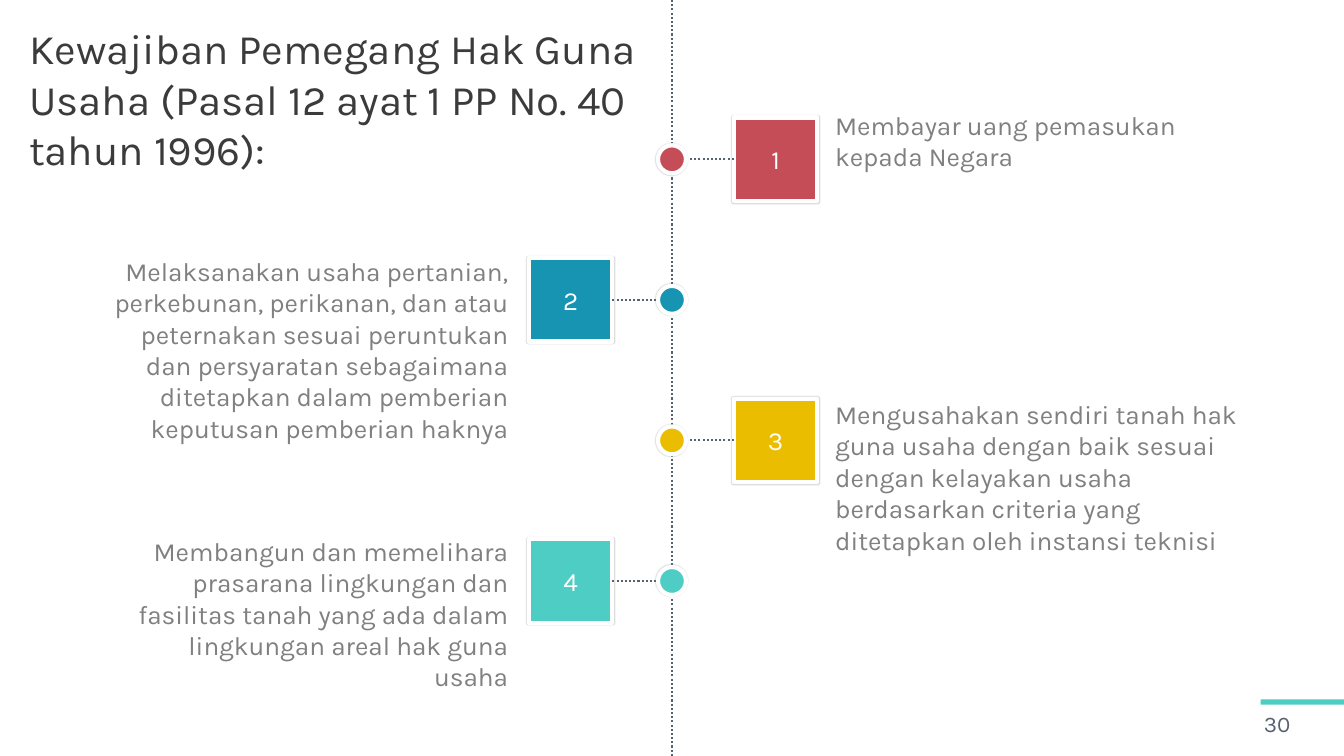
from dataclasses import dataclass
from itertools import chain
from typing import NamedTuple

from lxml.etree import SubElement
from pptx import Presentation
from pptx.dml.color import RGBColor
from pptx.enum.dml import MSO_LINE
from pptx.enum.shapes import MSO_CONNECTOR, MSO_SHAPE
from pptx.enum.text import MSO_ANCHOR, MSO_AUTO_SIZE, PP_ALIGN
from pptx.oxml.ns import qn
from pptx.util import Inches, Pt

# The slide is a grid of 48 columns by 27 rows of square cells.
COLS, ROWS = 48, 27
CELL = 20 / COLS
AXIS = COLS / 2
FIRST, STEP = 5.69, 5.02
SIDE, DOT = 2.98, 1


@dataclass(frozen=True)
class Theme:
    font: str = "Karla"
    ink: str = "3B3B3B"
    body: str = "808080"
    slate: str = "556272"
    white: str = "FFFFFF"
    red: str = "C54D57"
    blue: str = "1694B2"
    gold: str = "EABD00"
    mint: str = "4ECDC4"
    title_size: int = 45
    text_size: int = 28
    page_size: int = 24
    dots: float = 2.25
    rim: float = 4.5


class Box(NamedTuple):
    x: float
    y: float
    w: float
    h: float


class Side(NamedTuple):
    square: float
    text: float
    width: float
    align: PP_ALIGN
    site: int
    dot: float


class Duty(NamedTuple):
    side: Side
    color: str
    top: float
    height: float
    text: str


T = Theme()
LEFT = Side(18.89, 3.79, 14.59, PP_ALIGN.RIGHT, 3, AXIS - DOT / 2)
RIGHT = Side(26.21, 29.59, 15.5, PP_ALIGN.LEFT, 1, AXIS + DOT / 2)
DUTIES = (
    Duty(RIGHT, T.red, 3.79, 5.5, "Membayar uang pemasukan kepada Negara"),
    Duty(LEFT, T.blue, 9, 6.7,
         "Melaksanakan usaha pertanian, perkebunan, perikanan, dan atau "
         "peternakan sesuai peruntukan dan persyaratan sebagaimana "
         "ditetapkan dalam pemberian keputusan pemberian haknya"),
    Duty(RIGHT, T.gold, 14.11, 6.31,
         "Mengusahakan sendiri tanah hak guna usaha dengan baik sesuai "
         "dengan kelayakan usaha berdasarkan criteria yang ditetapkan "
         "oleh instansi teknisi"),
    Duty(LEFT, T.mint, 19, 6.74,
         "Membangun dan memelihara prasarana lingkungan dan fasilitas "
         "tanah yang ada dalam lingkungan areal hak guna usaha"),
)


def cells(n: float) -> int:
    return Inches(n * CELL)


def rgb(color: str) -> RGBColor:
    return RGBColor.from_string(color)


def write(shape, text: str, size: int, color: str, align=PP_ALIGN.LEFT,
          anchor=MSO_ANCHOR.TOP) -> None:
    frame = shape.text_frame
    frame.word_wrap = True
    frame.auto_size = MSO_AUTO_SIZE.NONE
    frame.vertical_anchor = anchor
    para = frame.paragraphs[0]
    para.alignment = align
    run = para.add_run()
    run.text = text
    run.font.name = T.font
    run.font.size = Pt(size)
    run.font.color.rgb = rgb(color)


def add_text(slide, box: Box, *args, **kw) -> None:
    write(slide.shapes.add_textbox(*map(cells, box)), *args, **kw)


def add_block(slide, kind, box: Box, color: str):
    shape = slide.shapes.add_shape(kind, *map(cells, box))
    shape.shadow.inherit = False
    shape.fill.solid()
    shape.fill.fore_color.rgb = rgb(color)
    shape.line.fill.background()
    return shape


def add_rim(shape) -> None:
    """Give the shape a white border with a faint shadow around it."""
    shape.line.color.rgb = rgb(T.white)
    shape.line.width = Pt(T.rim)
    effects = shape._element.spPr.find(qn("a:effectLst"))
    shade = SubElement(effects, qn("a:outerShdw"), blurRad=str(Pt(1)),
                       dist="0", dir="0", algn="ctr", rotWithShape="0")
    color = SubElement(shade, qn("a:srgbClr"), val="000000")
    SubElement(color, qn("a:alpha"), val="15000")


def add_line(slide, x1: float, y1: float, x2: float, y2: float):
    line = slide.shapes.add_connector(
        MSO_CONNECTOR.STRAIGHT, *map(cells, (x1, y1, x2, y2)))
    line.line.color.rgb = rgb(T.slate)
    line.line.width = Pt(T.dots)
    line.line.dash_style = MSO_LINE.ROUND_DOT
    SubElement(line._element.spPr, qn("a:effectLst"))
    return line


def add_duty(slide, num: int, y: float, duty: Duty) -> None:
    side = duty.side
    square = add_block(slide, MSO_SHAPE.RECTANGLE,
                       Box(side.square, y - SIDE / 2, SIDE, SIDE), duty.color)
    add_rim(square)
    write(square, str(num), T.text_size, T.white, PP_ALIGN.CENTER,
          MSO_ANCHOR.MIDDLE)
    link = add_line(slide, side.square, y, side.dot, y)
    link.begin_connect(square, side.site)
    dot = add_block(slide, MSO_SHAPE.OVAL,
                    Box(AXIS - DOT / 2, y - DOT / 2, DOT, DOT), duty.color)
    add_rim(dot)
    add_text(slide, Box(side.text, duty.top, side.width, duty.height),
             duty.text, T.text_size, T.body, side.align)


def add_title(slide, box: Box, text: str) -> None:
    title = slide.shapes.title
    title.left, title.top, title.width, title.height = map(cells, box)
    write(title, text, T.title_size, T.ink)


def main() -> None:
    deck = Presentation()
    deck.slide_width, deck.slide_height = cells(COLS), cells(ROWS)
    slide = deck.slides.add_slide(deck.slide_layouts[5])
    add_title(slide, Box(0.8, 0.7, 22.7, 5.69),
              "Kewajiban Pemegang Hak Guna Usaha "
              "(Pasal 12 ayat 1 PP No. 40 tahun 1996):")

    rows = [FIRST + STEP * i for i in range(len(DUTIES))]
    starts = chain([0], (y + DOT / 2 for y in rows))
    ends = chain((y - DOT / 2 for y in rows), [ROWS])
    for start, end in zip(starts, ends):
        add_line(slide, AXIS, start, AXIS, end)
    for num, (y, duty) in enumerate(zip(rows, DUTIES), 1):
        add_duty(slide, num, y, duty)

    add_block(slide, MSO_SHAPE.RECTANGLE, Box(45.02, 24.98, 2.98, 0.19), T.mint)
    add_text(slide, Box(44.9, 25.2, 3.1, 1.27), "30", T.page_size, T.slate,
             anchor=MSO_ANCHOR.MIDDLE)
    deck.save("out.pptx")


if __name__ == "__main__":
    main()
